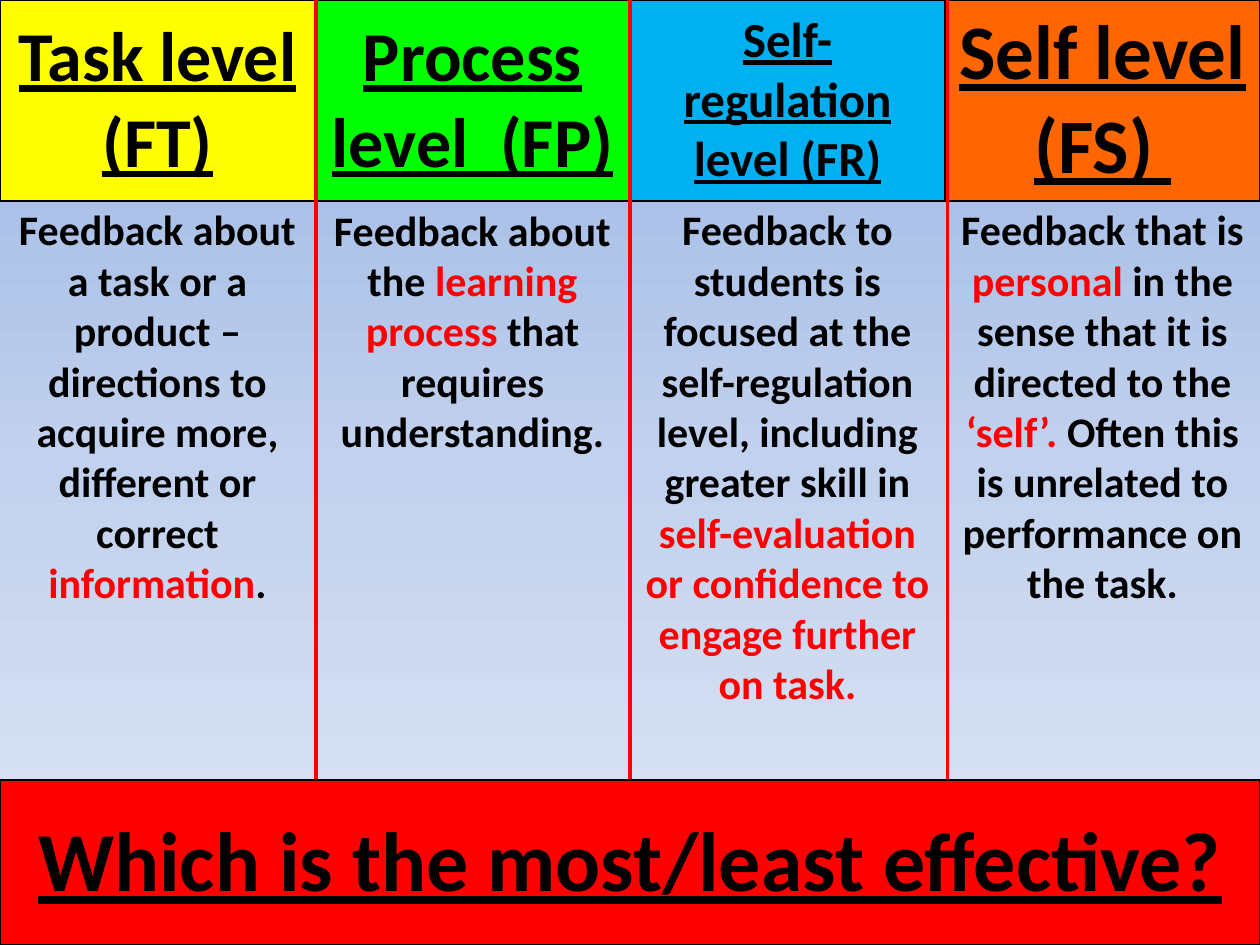
from copy import deepcopy

from lxml import etree
from pptx import Presentation
from pptx.dml.color import RGBColor
from pptx.enum import shapes, text
from pptx.oxml import ns
from pptx.util import Inches, Pt

BLACK = RGBColor(0x00, 0x00, 0x00)
RED = RGBColor(0xFF, 0x00, 0x00)
YELLOW = RGBColor(0xFF, 0xFF, 0x00)
GREEN = RGBColor(0x00, 0xFF, 0x00)
BLUE = RGBColor(0x00, 0xB0, 0xF0)
ORANGE = RGBColor(0xFF, 0x66, 0x00)
BACKGROUND = [(0, RGBColor(0x9A, 0xB5, 0xE4)),
              (0.5, RGBColor(0xC2, 0xD1, 0xED)),
              (1, RGBColor(0xE1, 0xE8, 0xF5))]

COLUMN_WIDTH = 2.5
HEADER_HEIGHT = 1.57
# Label, fill, text size
LEVELS = [("Task level (FT)", YELLOW, 40),
          ("Process level  (FP)", GREEN, 40),
          ("Self-regulation level (FR)", BLUE, 28),
          ("Self level (FS) ", ORANGE, 44)]
QUESTION = [("Which is the most/least effective?", RED, 48)]
# Runs of text with their colour, and the height of each box
DESCRIPTIONS = [
    ([("Feedback about a task or a product – directions to acquire more, "
       "different or correct ", BLACK), ("information", RED), (".", BLACK)], 3.33),
    ([("Feedback about the ", BLACK), ("learning process ", RED),
      ("that requires understanding.", BLACK)], 2.12),
    ([("Feedback to students is focused at the self-regulation level, "
       "including greater skill in ", BLACK),
      ("self-evaluation or confidence to engage further on task.", RED)], 4.14),
    ([("Feedback that is ", BLACK), ("personal", RED),
      (" in the sense that it is directed to the ", BLACK), ("‘self’. ", RED),
      ("Often this is unrelated to performance on the task.", BLACK)], 3.33),
]


def write_text(frame, runs, size=24, underline=None):
    """Fill a text frame with one centred bold paragraph of coloured runs."""
    paragraph = frame.paragraphs[0]
    paragraph.alignment = text.PP_ALIGN.CENTER
    for words, color in runs:
        run = paragraph.add_run()
        run.text = words
        run.font.name = "Calibri"
        run.font.size = Pt(size)
        run.font.bold = True
        run.font.underline = underline
        run.font.color.rgb = color


def add_borders(cell):
    properties = cell._tc.get_or_add_tcPr()
    for side in ("a:lnL", "a:lnR", "a:lnT", "a:lnB"):
        line = etree.SubElement(properties, ns.qn(side), w=str(Pt(1)))
        fill = etree.SubElement(line, ns.qn("a:solidFill"))
        etree.SubElement(fill, ns.qn("a:srgbClr"), val=str(BLACK))


def add_band(slide, left, top, width, height, labels):
    """Add a one-row table of coloured, underlined labels."""
    table = slide.shapes.add_table(1, len(labels), Inches(left), Inches(top),
                                   Inches(width), Inches(height)).table
    table.first_row = table.horz_banding = False
    for cell, (label, color, size) in zip(table.iter_cells(), labels):
        add_borders(cell)
        cell.fill.solid()
        cell.fill.fore_color.rgb = color
        cell.vertical_anchor = text.MSO_ANCHOR.MIDDLE
        write_text(cell.text_frame, [(label, BLACK)], size=size, underline=True)


def add_divider(slide, x, height):
    line = slide.shapes.add_connector(shapes.MSO_CONNECTOR.STRAIGHT,
                                      Inches(x), 0, Inches(x), Inches(height))
    line.line.color.rgb = RED
    line.line.width = Pt(2.25)
    etree.SubElement(line._element.spPr, ns.qn("a:effectLst"))


def add_description(slide, left, top, width, height, runs):
    box = slide.shapes.add_textbox(Inches(left), Inches(top),
                                   Inches(width), Inches(height))
    box.text_frame.word_wrap = True
    write_text(box.text_frame, runs)


def paint_background(slide):
    fill = slide.background.fill
    fill.gradient()
    fill.gradient_angle = 270  # counter-clockwise, so top to bottom
    first = fill._fill._gradFill.gsLst[0]
    first.addnext(deepcopy(first))
    for stop, (position, color) in zip(fill.gradient_stops, BACKGROUND):
        stop.position = position
        stop.color.rgb = color


def main():
    presentation = Presentation()
    presentation.slide_width = Inches(10)
    presentation.slide_height = Inches(7.5)
    slide = presentation.slides.add_slide(presentation.slide_layouts[6])
    paint_background(slide)

    # Level headings and column dividers
    add_band(slide, 0, 0, 10, HEADER_HEIGHT + 0.02, LEVELS)
    for x in (2.51, 5, 7.52):
        add_divider(slide, x, 7.5)

    # Description under each heading
    for column, (runs, height) in enumerate(DESCRIPTIONS):
        add_description(slide, column * COLUMN_WIDTH, HEADER_HEIGHT,
                        COLUMN_WIDTH, height, runs)

    # Closing question
    add_band(slide, 0, 6.19, 10, 1.31, QUESTION)
    presentation.save("out.pptx")


if __name__ == "__main__":
    main()
